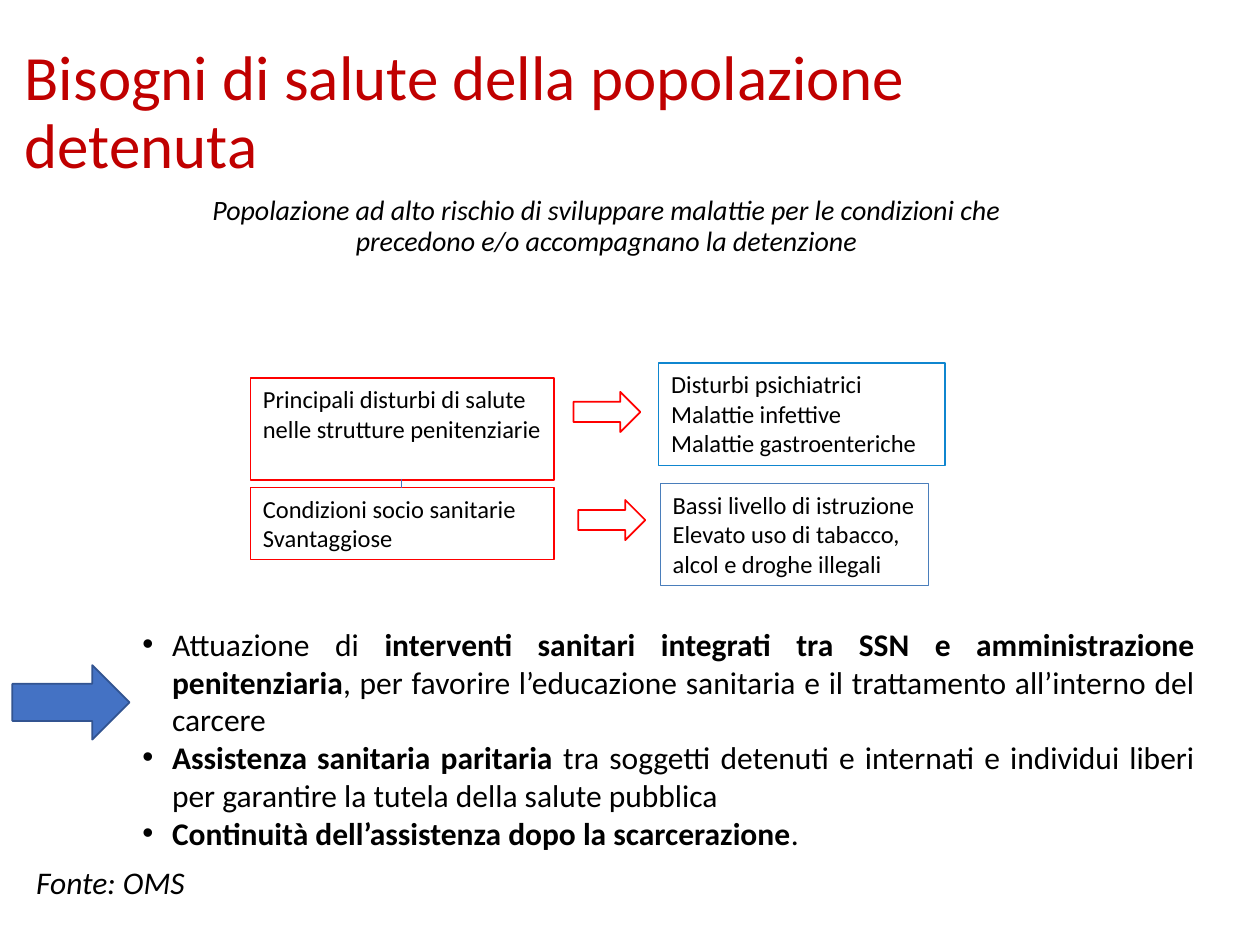
from lxml.etree import SubElement
from pptx import Presentation
from pptx.dml.color import RGBColor
from pptx.enum.shapes import MSO_CONNECTOR, MSO_SHAPE
from pptx.enum.text import MSO_ANCHOR, PP_ALIGN
from pptx.oxml.ns import qn
from pptx.util import Cm, Pt

BLACK = RGBColor(0x00, 0x00, 0x00)
CRIMSON = RGBColor(0xC0, 0x00, 0x00)
RED = RGBColor(0xFF, 0x00, 0x00)
SKY = RGBColor(0x0F, 0x86, 0xCF)
STEEL = RGBColor(0x4A, 0x7E, 0xBB)
BLUE = RGBColor(0x44, 0x72, 0xC4)
NAVY = RGBColor(0x32, 0x54, 0x91)

prs = Presentation()
prs.slide_width, prs.slide_height = Cm(25.4), Cm(19.05)
slide = prs.slides.add_slide(prs.slide_layouts[6])
shapes = slide.shapes


def write(shape, paragraphs, size, color=BLACK, italic=None, align=PP_ALIGN.LEFT,
          spacing=None, anchor=MSO_ANCHOR.TOP, bullet=False):
    """Fill a shape with paragraphs, each a list of (text, bold) runs."""
    frame = shape.text_frame
    frame.word_wrap = True
    frame.vertical_anchor = anchor
    for i, runs in enumerate(paragraphs):
        para = frame.add_paragraph() if i else frame.paragraphs[0]
        para.alignment = align
        para.line_spacing = spacing
        if bullet:
            props = para._p.get_or_add_pPr()
            props.set("marL", str(Cm(0.6)))
            props.set("indent", str(-Cm(0.6)))
            SubElement(props, qn("a:buFont"), typeface="Arial")
            SubElement(props, qn("a:buChar"), char="•")
        for text, bold in runs:
            run = para.add_run()
            run.text = text
            run.font.name = "Calibri"
            run.font.size = Pt(size)
            run.font.bold = bold
            run.font.italic = italic
            run.font.color.rgb = color


def add_outlined(kind, left, top, width, height, line, weight, fill=None):
    shape = shapes.add_shape(kind, Cm(left), Cm(top), Cm(width), Cm(height))
    shape.shadow.inherit = False
    if fill is None:
        shape.fill.background()
    else:
        shape.fill.solid()
        shape.fill.fore_color.rgb = fill
    shape.line.color.rgb = line
    shape.line.width = Pt(weight)
    return shape


# Heading
title = shapes.add_textbox(Cm(0.25), Cm(0.46), Cm(23.04), Cm(3.68))
write(title, [[("Bisogni di salute della popolazione detenuta", None)]], 36,
      color=CRIMSON, spacing=0.9, anchor=MSO_ANCHOR.MIDDLE)
subtitle = shapes.add_textbox(Cm(4.01), Cm(3.84), Cm(16.43), Cm(1.93))
write(subtitle, [[("Popolazione ad alto rischio di sviluppare malattie per le condizioni "
                   "che precedono e/o accompagnano la detenzione", None)]],
      16, italic=True, align=PP_ALIGN.CENTER, spacing=0.9)

# Health problems and social conditions, each with its details
boxes = [
    (5.05, 7.62, 6.12, 2.06, RED,
     ["Principali disturbi di salute nelle strutture penitenziarie"]),
    (13.28, 7.32, 5.77, 2.06, SKY,
     ["Disturbi psichiatrici", "Malattie infettive", "Malattie gastroenteriche"]),
    (5.05, 9.83, 6.12, 1.45, RED, ["Condizioni socio sanitarie", "Svantaggiose"]),
    (13.31, 9.75, 5.41, 2.06, STEEL,
     ["Bassi livello di istruzione", "Elevato uso di tabacco, alcol e droghe illegali"]),
]
for left, top, width, height, line, texts in boxes:
    box = add_outlined(MSO_SHAPE.RECTANGLE, left, top, width, height, line, 0.75)
    write(box, [[(text, None)] for text in texts], 14)

for left, top in [(11.56, 7.9), (11.66, 10.08)]:
    add_outlined(MSO_SHAPE.RIGHT_ARROW, left, top, 1.35, 0.81, RED, 1)

link = shapes.add_connector(MSO_CONNECTOR.STRAIGHT, Cm(8.1), Cm(9.65), Cm(8.1), Cm(9.83))
link.line.color.rgb = BLUE
link.line.width = Pt(0.5)
SubElement(link._element.spPr, qn("a:effectLst"))

# Required actions
add_outlined(MSO_SHAPE.RIGHT_ARROW, 0.25, 13.41, 2.36, 1.5, NAVY, 1, fill=BLUE)
actions = shapes.add_textbox(Cm(2.62), Cm(12.47), Cm(21.72), Cm(4.88))
write(actions, [
    [("Attuazione di ", None),
     ("interventi sanitari integrati tra SSN e amministrazione penitenziaria", True),
     (", per favorire l’educazione sanitaria e il trattamento all’interno del carcere", None)],
    [("Assistenza sanitaria paritaria ", True),
     ("tra soggetti detenuti e internati e individui liberi per garantire la tutela "
      "della salute pubblica", None)],
    [("Continuità dell’assistenza dopo la scarcerazione", True), (".", None)],
], 18, align=PP_ALIGN.JUSTIFY, bullet=True)

source = shapes.add_textbox(Cm(0.48), Cm(17.27), Cm(5.84), Cm(1.02))
write(source, [[("Fonte: OMS", None)]], 18, italic=True)

prs.save("out.pptx")
